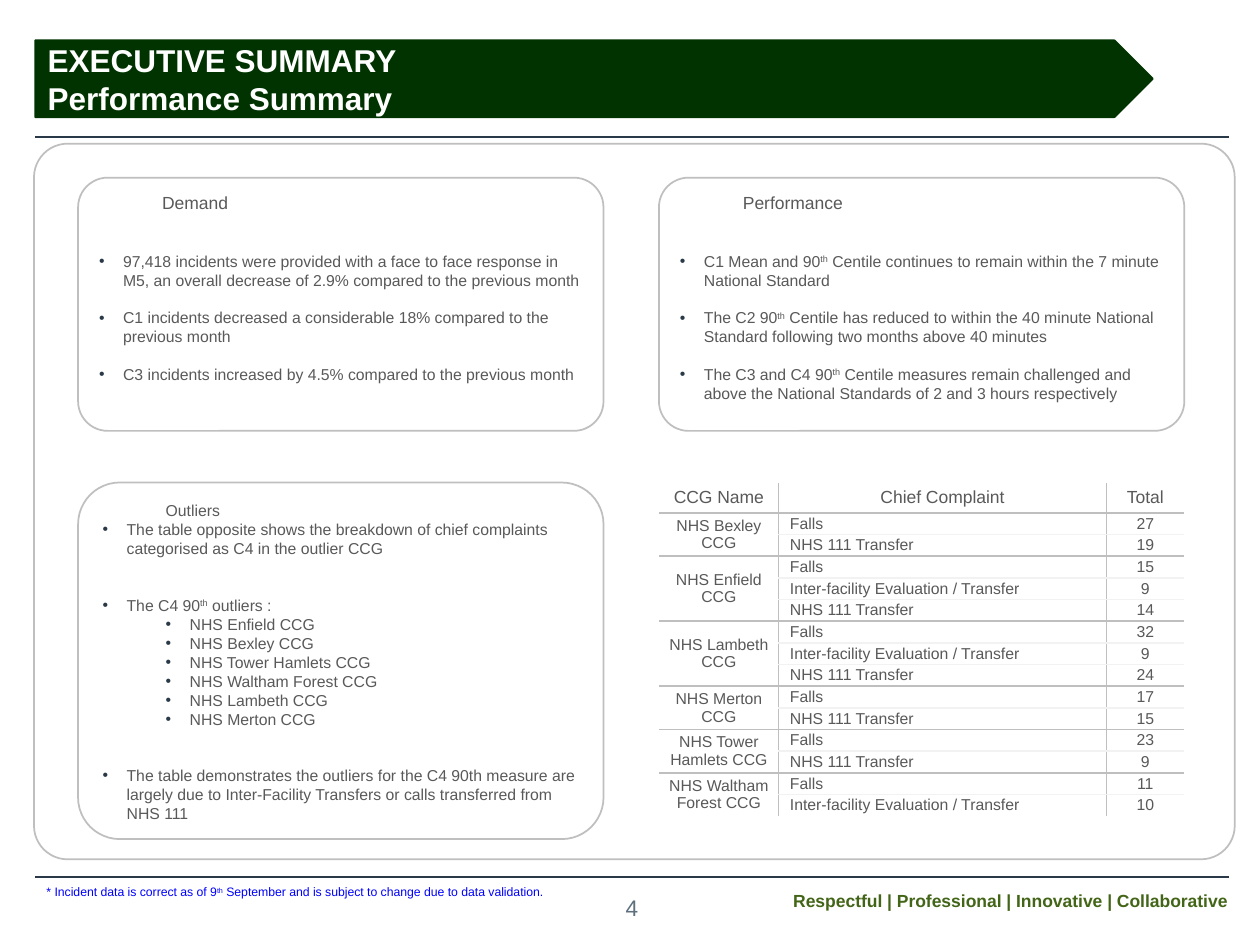
from dataclasses import dataclass

from lxml import etree
from pptx import Presentation, util as u
from pptx.dml.color import RGBColor
from pptx.enum import shapes, text
from pptx.oxml import ns


@dataclass(frozen=True)
class Theme:
    font: str = "Arial"
    banner: str = "003300"
    white: str = "FFFFFF"
    body: str = "595959"
    border: str = "BFBFBF"
    hairline: str = "F2F2F2"
    rule: str = "293947"
    number: str = "5E707D"
    motto: str = "436518"
    note: str = "0000FF"
    title_size: float = 18
    number_size: float = 12.9
    heading_size: float = 10
    body_size: float = 9
    note_size: float = 7
    blank_line: float = 10.8


LEFT, CENTER, RIGHT = text.PP_ALIGN.LEFT, text.PP_ALIGN.CENTER, text.PP_ALIGN.RIGHT
TOP, MIDDLE = text.MSO_ANCHOR.TOP, text.MSO_ANCHOR.MIDDLE


def apply(target, values):
    for name, value in values.items():
        setattr(target, name, value)


def child(parent, tag, **attributes):
    return etree.SubElement(parent, ns.qn(tag), attributes)


def margins(left=0, top=0, right=0, bottom=0):
    sides = dict(left=left, top=top, right=right, bottom=bottom)
    return {f"margin_{side}": u.Inches(size) for side, size in sides.items()}


class SlideBuilder:
    def __init__(self, theme, slide):
        self.theme = theme
        self.slide = slide

    def fill_paragraph(self, paragraph, words, size, color, bold=False, **layout):
        apply(paragraph, layout)
        for index, part in enumerate(words.split("^")):
            run = paragraph.add_run()
            run.text = part
            apply(run.font, dict(name=self.theme.font, size=u.Pt(size), bold=bold))
            run.font.color.rgb = RGBColor.from_string(color)
            if index % 2:
                run._r.get_or_add_rPr().set("baseline", "30000")

    def indent(self, paragraph, left, hanging=0):
        properties = paragraph._p.get_or_add_pPr()
        properties.set("marL", str(u.Inches(left)))
        properties.set("indent", str(-u.Inches(hanging)))
        if hanging:
            child(child(properties, "a:buClr"), "a:srgbClr", val=self.theme.rule)
            child(properties, "a:buFont", typeface=self.theme.font)
            child(properties, "a:buChar", char="•")

    def text_box(self, box, words, size, color, bold=False, alignment=LEFT, **frame):
        shape = self.slide.shapes.add_textbox(*map(u.Inches, box))
        apply(shape.text_frame, frame)
        self.fill_paragraph(shape.text_frame.paragraphs[0], words, size, color, bold,
                            alignment=alignment)

    def rule(self, left, right, y):
        line = self.slide.shapes.add_connector(
            shapes.MSO_CONNECTOR.STRAIGHT, *map(u.Inches, (left, y, right, y)))
        line.line.color.rgb = RGBColor.from_string(self.theme.rule)
        line.line.width = u.Pt(1)
        child(line._element.spPr, "a:effectLst")

    def shape(self, kind, box, fill, border, adjustment):
        shape = self.slide.shapes.add_shape(kind, *map(u.Inches, box))
        shape.shadow.inherit = False
        shape.adjustments[0] = adjustment
        shape.fill.solid()
        shape.fill.fore_color.rgb = RGBColor.from_string(fill)
        shape.line.color.rgb = RGBColor.from_string(border)
        shape.line.width = u.Pt(1)
        return shape

    def banner(self, box, lines):
        theme = self.theme
        shape = self.shape(shapes.MSO_SHAPE.PENTAGON, box, theme.banner, theme.banner, 0.5)
        frame = shape.text_frame
        apply(frame, dict(vertical_anchor=MIDDLE, word_wrap=True))
        for index, words in enumerate(lines):
            paragraph = frame.add_paragraph() if index else frame.paragraphs[0]
            self.fill_paragraph(paragraph, words, theme.title_size, theme.white, True,
                                alignment=LEFT)

    def round_box(self, box, adjustment):
        return self.shape(shapes.MSO_SHAPE.ROUNDED_RECTANGLE, box,
                          self.theme.white, self.theme.border, adjustment)

    def panel(self, box, heading, heading_size, bullets):
        theme = self.theme
        frame = self.round_box(box, 0.117).text_frame
        apply(frame, dict(vertical_anchor=TOP, word_wrap=True, **margins(0.1, 0.05, 0.1, 0.05)))
        paragraph = frame.paragraphs[0]
        self.indent(paragraph, 0.5)
        self.fill_paragraph(paragraph, heading, heading_size, theme.body, alignment=LEFT)
        for words, gap_lines, left in bullets:
            paragraph = frame.add_paragraph()
            self.indent(paragraph, left, 0.19)
            self.fill_paragraph(paragraph, words, theme.body_size, theme.body,
                                alignment=LEFT, space_before=u.Pt(gap_lines * theme.blank_line))

    def cell(self, cell, words, size, borders, alignment=CENTER, inset=0):
        apply(cell, dict(vertical_anchor=MIDDLE, **margins(left=inset)))
        properties = cell._tc.get_or_add_tcPr()
        for side in "LRTB":
            line = child(properties, f"a:ln{side}", w=str(u.Pt(1)))
            if side in borders:
                child(child(line, "a:solidFill"), "a:srgbClr", val=borders[side])
            else:
                child(line, "a:noFill")
        cell.fill.solid()
        cell.fill.fore_color.rgb = RGBColor.from_string(self.theme.white)
        if words:
            self.fill_paragraph(cell.text_frame.paragraphs[0], words, size, self.theme.body,
                                alignment=alignment)

    def table(self, box, widths, header_height, header, groups):
        theme = self.theme
        strong, weak = theme.border, theme.hairline
        sides = [dict(R=strong), dict(L=strong, R=strong), dict(L=strong)]
        count = sum(len(rows) for _, rows in groups)
        table = self.slide.shapes.add_table(count + 1, 3, *map(u.Inches, box)).table
        apply(table, dict(first_row=False, horz_banding=False))
        for column, width in zip(table.columns, widths):
            column.width = u.Inches(width)
        for index, row in enumerate(table.rows):
            row.height = u.Inches((box[3] - header_height) / count if index else header_height)
        for column, words in enumerate(header):
            self.cell(table.cell(0, column), words, theme.heading_size,
                      sides[column] | dict(B=strong))
        row = 1
        for name, complaints in groups:
            last = row + len(complaints) - 1
            closing = {} if last == count else dict(B=strong)
            table.cell(row, 0).merge(table.cell(last, 0))
            for offset, (complaint, total) in enumerate(complaints):
                first, final = offset == 0, row + offset == last
                edges = dict(T=strong if first else weak) | (closing if final else dict(B=weak))
                self.cell(table.cell(row + offset, 0), name if first else "",
                          theme.body_size, sides[0] | dict(T=strong) | closing)
                self.cell(table.cell(row + offset, 1), complaint, theme.body_size,
                          sides[1] | edges, LEFT, 0.09)
                self.cell(table.cell(row + offset, 2), str(total), theme.body_size,
                          sides[2] | edges)
            row = last + 1


DEMAND = [
    ("97,418 incidents were provided with a face to face response in M5, an overall decrease of 2.9% compared to the previous month", 2, 0.19),
    ("C1 incidents decreased a considerable 18% compared to the previous month", 1, 0.19),
    ("C3 incidents increased by 4.5% compared to the previous month", 1, 0.19),
]
PERFORMANCE = [
    ("C1 Mean and 90^th^ Centile continues to remain within the 7 minute National Standard", 2, 0.19),
    ("The C2 90^th^ Centile has reduced to within the 40 minute National Standard following two months above 40 minutes", 1, 0.19),
    ("The C3 and C4 90^th^ Centile measures remain challenged and above the National Standards of 2 and 3 hours respectively", 1, 0.19),
]
OUTLIER_AREAS = ["Enfield", "Bexley", "Tower Hamlets", "Waltham Forest", "Lambeth", "Merton"]
OUTLIERS = [
    ("The table opposite shows the breakdown of chief complaints categorised as C4 in the outlier CCG", 0, 0.19),
    ("The C4 90^th^ outliers :", 2, 0.19),
    *[(f"NHS {area} CCG", 0, 0.69) for area in OUTLIER_AREAS],
    ("The table demonstrates the outliers for the C4 90th measure are largely due to Inter-Facility Transfers or calls transferred from NHS 111", 2, 0.19),
]
FALLS, FACILITY, TRANSFER = "Falls", "Inter-facility Evaluation / Transfer", "NHS 111 Transfer"
COMPLAINTS = [
    ("NHS Bexley CCG", [(FALLS, 27), (TRANSFER, 19)]),
    ("NHS Enfield CCG", [(FALLS, 15), (FACILITY, 9), (TRANSFER, 14)]),
    ("NHS Lambeth CCG", [(FALLS, 32), (FACILITY, 9), (TRANSFER, 24)]),
    ("NHS Merton CCG", [(FALLS, 17), (TRANSFER, 15)]),
    ("NHS Tower Hamlets CCG", [(FALLS, 23), (TRANSFER, 9)]),
    ("NHS Waltham Forest CCG", [(FALLS, 11), (FACILITY, 10)]),
]


def main():
    presentation = Presentation()
    apply(presentation, dict(slide_width=u.Inches(10), slide_height=u.Inches(7.5)))
    theme = Theme()
    builder = SlideBuilder(theme, presentation.slides.add_slide(presentation.slide_layouts[6]))
    builder.text_box((4.9, 7.08, 0.23, 0.25), "4", theme.number_size, theme.number,
                     alignment=CENTER, word_wrap=False, vertical_anchor=MIDDLE, **margins())
    for y in (1.09, 6.96):
        builder.rule(0.28, 9.75, y)
    builder.text_box((6.17, 7.06, 3.57, 0.23), "Respectful | Professional | Innovative | Collaborative",
                     theme.heading_size, theme.motto, True, RIGHT, word_wrap=True, **margins())
    builder.banner((0.28, 0.32, 8.87, 0.61), ["EXECUTIVE SUMMARY", "Performance Summary"])
    builder.round_box((0.27, 1.14, 9.53, 5.68), 0.047)
    left, right, width, upper, lower = 0.62, 5.23, 4.17, 1.41, 3.83
    builder.panel((right, upper, width, 2.01), "Performance", theme.heading_size, PERFORMANCE)
    builder.panel((left, upper, width, 2.01), "Demand", theme.heading_size, DEMAND)
    builder.text_box((0.27, 6.97, 4.22, 0.22),
                     "* Incident data is correct as of 9^th^ September and is subject to change due to data validation.",
                     theme.note_size, theme.note, word_wrap=False,
                     auto_size=text.MSO_AUTO_SIZE.SHAPE_TO_FIT_TEXT)
    builder.panel((left, lower, width, 2.83), "Outliers", theme.body_size, OUTLIERS)
    builder.table((right, lower, width, 2.65), (0.95, 2.6, 0.62), 0.24,
                  ("CCG Name", "Chief Complaint", "Total"), COMPLAINTS)
    presentation.save("out.pptx")


if __name__ == "__main__":
    main()
